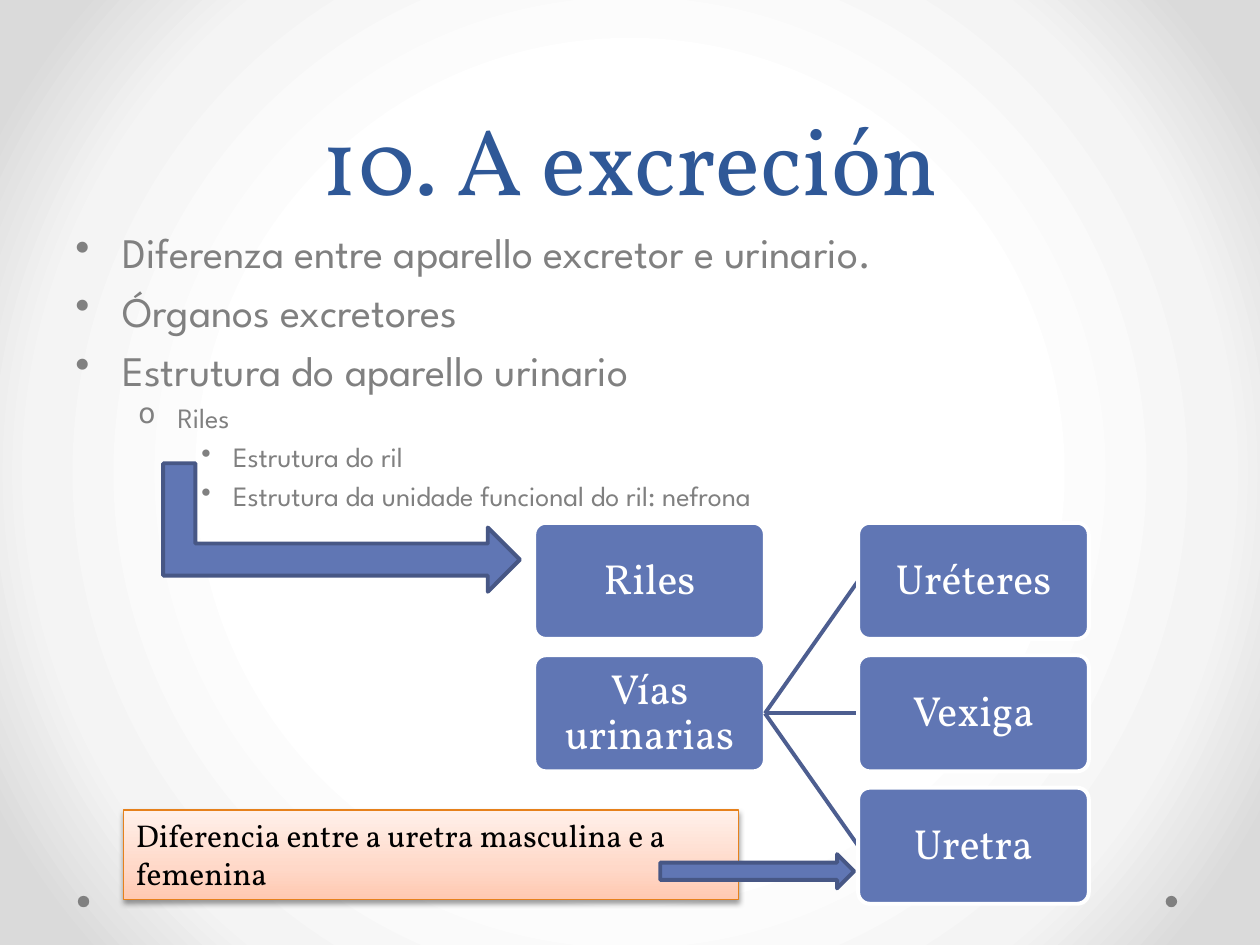
from dataclasses import dataclass

from lxml import etree
from pptx import Presentation
from pptx import util as u
from pptx.dml.color import RGBColor
from pptx.enum import shapes, text
from pptx.oxml import parse_xml
from pptx.oxml.ns import nsdecls, qn

KIND = shapes.MSO_SHAPE
ALIGN = text.PP_ALIGN
ANCHOR = text.MSO_ANCHOR


@dataclass(frozen=True)
class Theme:
    head: str = "Vollkorn"
    body: str = "League Spartan"
    title: str = "2F5897"
    grey: str = "808080"
    blue: str = "6076B4"
    edge: str = "475785"
    link: str = "4D5E90"
    white: str = "FFFFFF"
    black: str = "000000"
    orange: str = "E6811C"
    back: tuple = ((50, "FFFFFF"), (76, "F4F4F4"), (92, "DADADA"))
    peach: tuple = ((0, "FFC9B1"), (35, "FFD8C8"), (100, "FFF0EA"))
    huge: int = 54
    large: int = 24
    note: int = 18
    small: int = 16
    thick: float = 2.25
    thin: float = 0.75


LEVELS = [
    (0.95, 0.95, "•", Theme.large),
    (2.06, 0.79, "o", Theme.small),
    (3.18, 0.64, "•", Theme.small),
]


def place(*nums):
    return [u.Cm(n) for n in nums]


def grad(stops, shade):
    marks = "".join(
        f'<a:gs pos="{pos * 1000}"><a:srgbClr val="{tone}"/></a:gs>'
        for pos, tone in stops
    )
    return (f'<a:gradFill {nsdecls("a")} rotWithShape="1">'
            f'<a:gsLst>{marks}</a:gsLst>{shade}</a:gradFill>')


class Sheet:
    def __init__(self, slide, theme):
        self.slide, self.theme = slide, theme
        self.items = slide.shapes

    def backdrop(self):
        mid = ('<a:path path="circle"><a:fillToRect l="50000" t="50000" '
               'r="50000" b="50000"/></a:path>')
        fill = grad(self.theme.back, mid)
        self.slide.element.cSld.insert(0, parse_xml(
            f'<p:bg {nsdecls("p", "a")}><p:bgPr>{fill}'
            '<a:effectLst/></p:bgPr></p:bg>'))

    def style(self, para, font, size, tone):
        for run in para.runs:
            run.font.name = font
            run.font.size = u.Pt(size)
            run.font.color.rgb = RGBColor.from_string(tone)

    def shape(self, kind, box, fill=None, line=None, width=None):
        item = self.items.add_shape(kind, *place(*box))
        item.shadow.inherit = False
        if fill:
            item.fill.solid()
            item.fill.fore_color.rgb = RGBColor.from_string(fill)
        if line:
            item.line.color.rgb = RGBColor.from_string(line)
            item.line.width = u.Pt(width)
        else:
            item.line.fill.background()
        return item

    def dot(self, left):
        self.shape(KIND.OVAL, (left, 18.06, 0.23, 0.23), self.theme.grey)

    def arrow(self, kind, box, turn=0):
        item = self.shape(kind, box, self.theme.blue, self.theme.edge,
                          self.theme.thick)
        item.rotation = turn

    def title(self, words, box):
        frame = self.items.add_textbox(*place(*box)).text_frame
        frame.word_wrap = True
        frame.vertical_anchor = ANCHOR.BOTTOM
        frame.text = words
        para = frame.paragraphs[0]
        para.alignment = ALIGN.CENTER
        para.line_spacing = u.Pt(58)
        self.style(para, self.theme.head, self.theme.huge, self.theme.title)

    def outline(self, rows, box):
        frame = self.items.add_textbox(*place(*box)).text_frame
        frame.word_wrap = True
        frame.text = "\n".join(words for _, words in rows)
        for para, (level, _) in zip(frame.paragraphs, rows):
            left, hang, mark, size = LEVELS[level]
            para.level = level
            props = para._p.get_or_add_pPr()
            props.set("marL", str(u.Cm(left)))
            props.set("indent", str(-u.Cm(hang)))
            gap = etree.SubElement(props, qn("a:spcBef"))
            etree.SubElement(gap, qn("a:spcPct"), val="20000")
            etree.SubElement(props, qn("a:buChar"), char=mark)
            self.style(para, self.theme.body, size, self.theme.grey)

    def node(self, words, left, top):
        item = self.shape(KIND.ROUNDED_RECTANGLE, (left, top, 4.65, 2.34),
                          self.theme.blue, self.theme.white, self.theme.thick)
        item.adjustments[0] = 0.1
        frame = item.text_frame
        frame.margin_left = frame.margin_right = u.Cm(0.12)
        frame.margin_top = frame.margin_bottom = u.Cm(0.12)
        frame.word_wrap = True
        frame.vertical_anchor = ANCHOR.MIDDLE
        frame.text = words
        para = frame.paragraphs[0]
        para.alignment = ALIGN.CENTER
        para.line_spacing = 0.9
        self.style(para, self.theme.head, self.theme.large, self.theme.white)
        return item

    def join(self, start, end):
        link = self.items.add_connector(shapes.MSO_CONNECTOR.STRAIGHT, 0, 0, 0, 0)
        link.begin_connect(start, 3)
        link.end_connect(end, 1)
        link.line.color.rgb = RGBColor.from_string(self.theme.link)
        link.line.width = u.Pt(self.theme.thick)
        etree.SubElement(link.element.spPr, qn("a:effectLst"))
        end.element.addprevious(link.element)

    def note(self, words, box):
        item = self.shape(KIND.RECTANGLE, box, line=self.theme.orange,
                          width=self.theme.thin)
        props = item.element.spPr
        props.insert(2, parse_xml(
            grad(self.theme.peach, '<a:lin ang="16200000" scaled="1"/>')))
        props.find(qn("a:effectLst")).append(parse_xml(
            f'<a:outerShdw {nsdecls("a")} blurRad="40000" dist="20000" '
            f'dir="5400000" rotWithShape="0"><a:srgbClr val="{self.theme.black}">'
            '<a:alpha val="38000"/></a:srgbClr></a:outerShdw>'))
        frame = item.text_frame
        frame.word_wrap = True
        frame.vertical_anchor = ANCHOR.TOP
        frame.text = words
        para = frame.paragraphs[0]
        para.alignment = ALIGN.LEFT
        self.style(para, self.theme.head, self.theme.note, self.theme.black)


def main():
    deck = Presentation()
    deck.slide_width, deck.slide_height = place(25.4, 19.05)
    sheet = Sheet(deck.slides.add_slide(deck.slide_layouts[6]), Theme())
    sheet.backdrop()
    for left in (23.5, 1.57):
        sheet.dot(left)
    sheet.title("10. A excreción", (1.27, 0, 22.86, 4.45))
    sheet.outline([
        (0, "Diferenza entre aparello excretor e urinario."),
        (0, "Órganos excretores"),
        (0, "Estrutura do aparello urinario"),
        (1, "Riles"),
        (2, "Estrutura do ril"),
        (2, "Estrutura da unidade funcional do ril: nefrona"),
    ], (1.27, 4.45, 22.86, 12.57))

    tops = [10.54 + 2.67 * row for row in range(3)]
    sheet.node("Riles", 10.77, tops[0])
    tract = sheet.node("Vías urinarias", 10.77, tops[1])
    for words, top in zip(("Uréteres", "Vexiga", "Uretra"), tops):
        sheet.join(tract, sheet.node(words, 17.3, top))

    sheet.arrow(KIND.BENT_UP_ARROW, (5.59, 7.04, 2.59, 7.19), 90)
    sheet.note("Diferencia entre a uretra masculina e a femenina",
               (2.49, 16.33, 12.4, 1.8))
    sheet.arrow(KIND.RIGHT_ARROW, (13.31, 17.22, 3.91, 0.69))
    deck.save("out.pptx")


if __name__ == "__main__":
    main()
